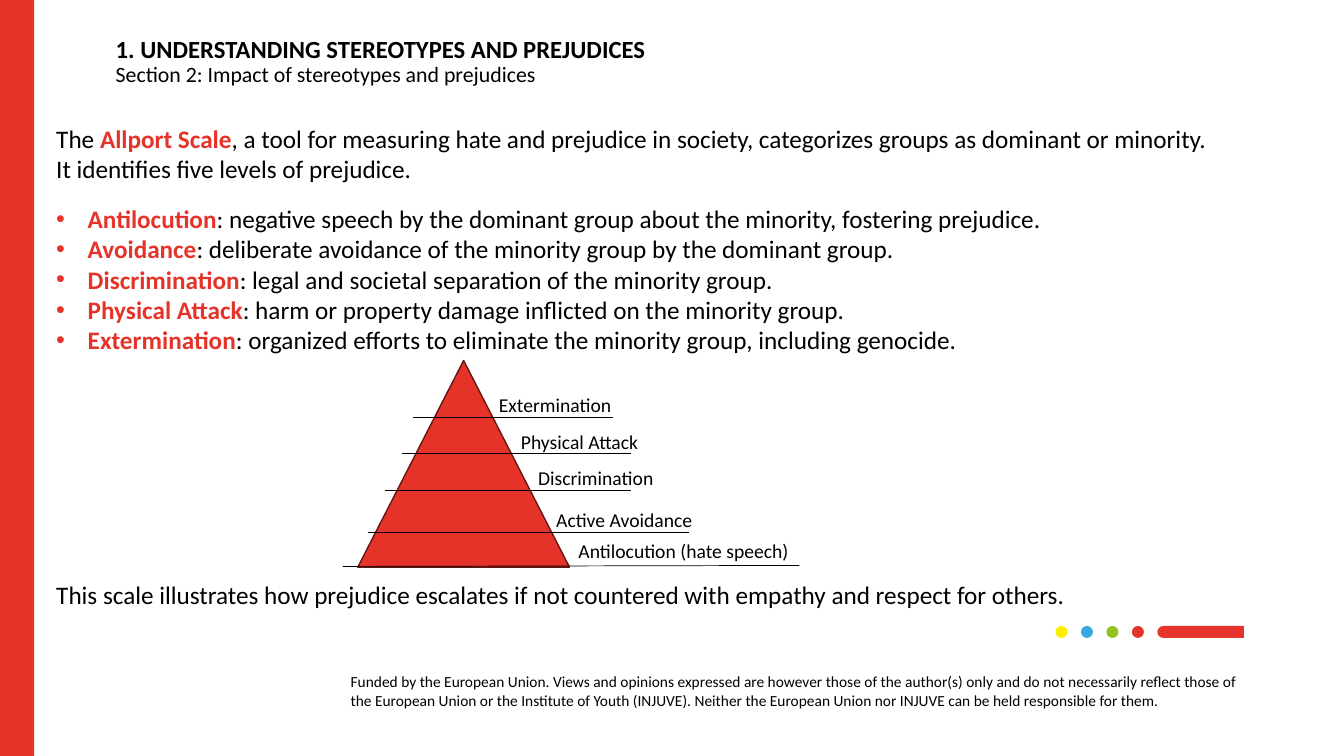
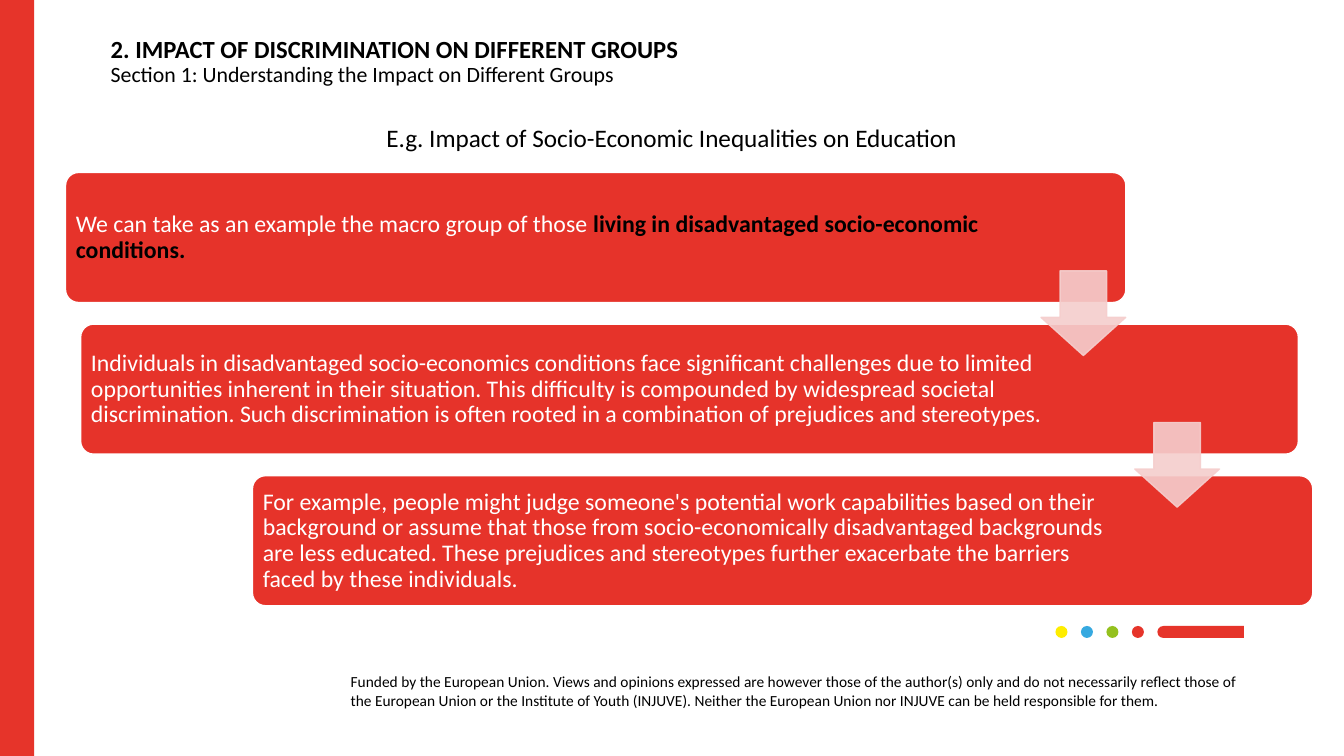
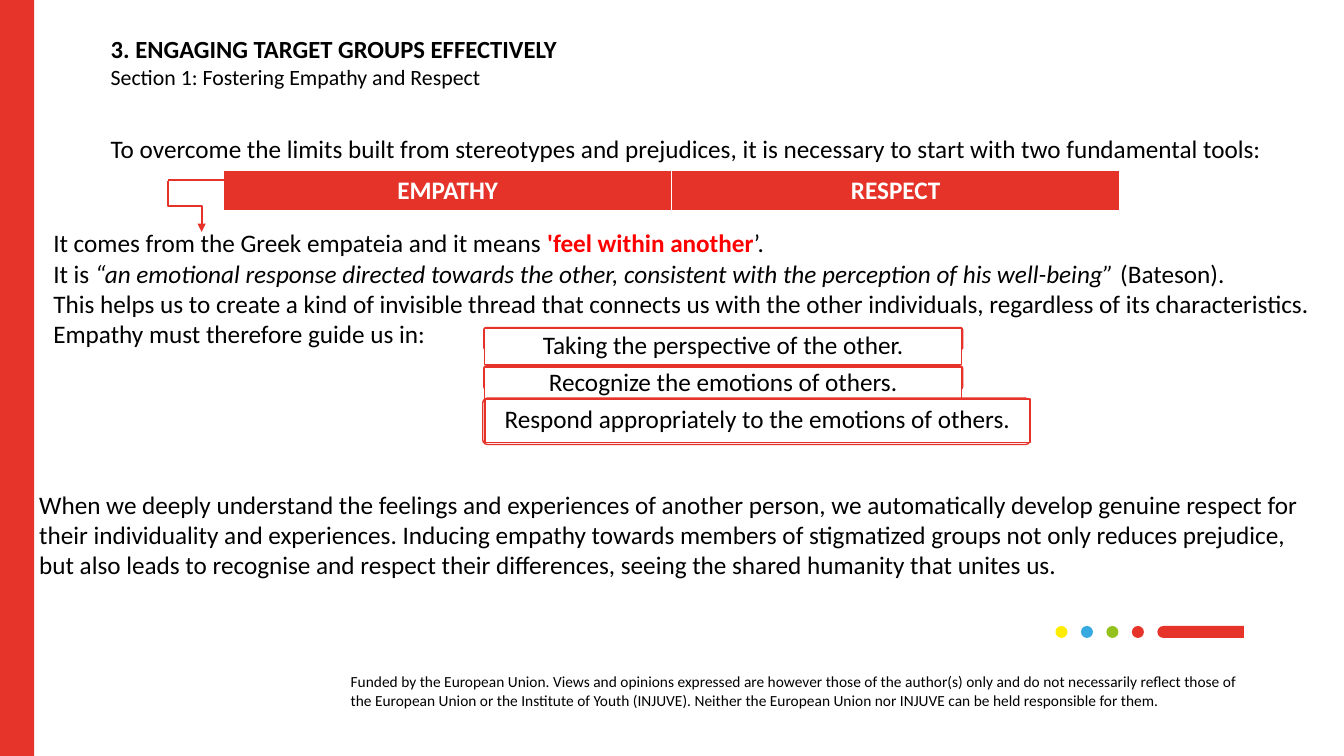
from dataclasses import dataclass
from typing import NamedTuple, Optional

from lxml import etree
from pptx import Presentation
from pptx.dml.color import RGBColor
from pptx.enum import shapes, text
from pptx.oxml import ns
from pptx.util import Pt

FONT = "Calibri"
COLORS = {
    "band": "E6342A", "red": "E6332A", "edge": "651612", "pure": "FF0000",
    "green": "94C11E", "blue": "36A9E0", "yellow": "FEED00",
    "pink": "F5CECD", "black": "000000", "white": "FFFFFF",
}
KIND = shapes.MSO_SHAPE
LEFT, MID, JUST = text.PP_ALIGN.LEFT, text.PP_ALIGN.CENTER, text.PP_ALIGN.JUSTIFY
FUNDING = (
    "Funded by the European Union. Views and opinions expressed are however those of the "
    "author(s) only and do not necessarily reflect those of the European Union or the "
    "Institute of Youth (INJUVE). Neither the European Union nor INJUVE can be held "
    "responsible for them."
)


class Area(NamedTuple):
    x: float
    y: float
    w: float
    h: float


@dataclass
class Run:
    text: str
    color: str = "black"
    bold: bool = False
    italic: bool = False
    size: float = 18


@dataclass
class Para:
    runs: list[Run]
    align: text.PP_ALIGN = LEFT
    lines: float = 1.0
    bullet: bool = False


class Level(NamedTuple):
    """One step of the pyramid: its label corner and its rule."""
    name: str
    x: float
    y: float
    start: float
    end: float
    rule: float
    rise: float = 0


class Step(NamedTuple):
    """One panel of the cascade and the width of its text."""
    x: float
    w: float
    wrap: float
    runs: list[Run]


class Skill(NamedTuple):
    name: str
    back: Area
    front: Area


def tint(name: str) -> RGBColor:
    return RGBColor.from_string(COLORS[name])


def sub(parent, tag: str, **attrs):
    return etree.SubElement(parent, ns.qn(tag), attrs)


def write(frame, paras: list[Para], inset=(7.2, 3.6), anchor=text.MSO_ANCHOR.TOP) -> None:
    frame.word_wrap = True
    frame.vertical_anchor = anchor
    frame.margin_left = frame.margin_right = Pt(inset[0])
    frame.margin_top = frame.margin_bottom = Pt(inset[1])
    for i, para in enumerate(paras):
        line = frame.add_paragraph() if i else frame.paragraphs[0]
        if para.bullet:
            props = line._p.get_or_add_pPr()
            props.set("marL", str(Pt(22.5)))
            props.set("indent", str(-Pt(22.5)))
            sub(props, "a:buFont", typeface="Arial")
            sub(props, "a:buChar", char="•")
        line.alignment = para.align
        line.line_spacing = para.lines
        for item in para.runs:
            run = line.add_run()
            run.text = item.text
            font = run.font
            font.name, font.size = FONT, Pt(item.size)
            font.bold, font.italic = item.bold, item.italic
            font.color.rgb = tint(item.color)


def label(slide, area: Area, *paras: Para, **style) -> None:
    box = slide.shapes.add_textbox(*map(Pt, area))
    write(box.text_frame, list(paras), **style)


def draw(slide, kind, area: Area, fill: str, line: Optional[str] = None, adjust=()):
    shape = slide.shapes.add_shape(kind, *map(Pt, area))
    shape.shadow.inherit = False
    shape.fill.solid()
    shape.fill.fore_color.rgb = tint(fill)
    if line:
        shape.line.color.rgb = tint(line)
        shape.line.width = Pt(1)
    else:
        shape.line.fill.background()
    for i, value in enumerate(adjust):
        shape.adjustments[i] = value
    return shape


def rule(slide, ends, color: str, width: float, kind=shapes.MSO_CONNECTOR.STRAIGHT):
    line = slide.shapes.add_connector(kind, *map(Pt, ends))
    line.line.color.rgb = tint(color)
    line.line.width = Pt(width)
    sub(line._element.spPr, "a:effectLst")
    return line


def start(deck, title: str, section: str, x: float = 72, lines: float = 0.9):
    """Add a slide with the band, dots, funding note and heading."""
    slide = deck.slides.add_slide(deck.slide_layouts[6])
    draw(slide, KIND.RECTANGLE, Area(0, 0, 24.5, 540), "band")
    draw(slide, KIND.RECTANGLE, Area(831.6, 447.1, 56.9, 8.6), "band")
    for i, color in enumerate(("yellow", "blue", "green", "band", "band")):
        draw(slide, KIND.OVAL, Area(753.9 + 18.2 * i, 447.1, 8.6, 8.6), color)
    label(slide, Area(243.4, 476.6, 650.2, 33.8), Para([Run(FUNDING, size=11)]))
    label(slide, Area(x, 23, 547.2, 49.7),
          Para([Run(title, bold=True, size=17.6)], lines=0.9),
          Para([Run(section, size=15.6)], lines=lines))
    return slide


def scale(deck) -> None:
    slide = start(deck, "1. UNDERSTANDING STEREOTYPES AND PREJUDICES",
                  "Section 2: Impact of stereotypes and prejudices", x=75.6)
    terms = {
        "Antilocution": "negative speech by the dominant group about the minority, fostering prejudice.",
        "Avoidance": "deliberate avoidance of the minority group by the dominant group.",
        "Discrimination": "legal and societal separation of the minority group.",
        "Physical Attack": "harm or property damage inflicted on the minority group.",
        "Extermination": "organized efforts to eliminate the minority group, including genocide.",
    }
    label(slide, Area(33.1, 141.8, 890.6, 116.6),
          *(Para([Run(term, "red", True), Run(": " + note)], bullet=True)
            for term, note in terms.items()))
    label(slide, Area(33.1, 410.4, 818.6, 28.8), Para([Run(
        "This scale illustrates how prejudice escalates if not countered with empathy "
        "and respect for others.")]))
    draw(slide, KIND.ISOSCELES_TRIANGLE, Area(255.6, 257.5, 151.2, 147.6), "red", "edge")
    levels = [
        Level("Extermination", 349.2, 277.2, 295.2, 437.8, 298.1),
        Level("Physical Attack", 365, 303.8, 287.3, 450.7, 324),
        Level("Discrimination", 377.3, 329, 275, 450.7, 350.6),
        Level("Active Avoidance", 390.2, 359.3, 262.8, 492.5, 380.2),
        Level("Antilocution (hate speech)", 406.1, 381.6, 244.8, 571, 404.6, 0.7),
    ]
    for row in levels:
        rule(slide, (row.start, row.rule, row.end, row.rule - row.rise), "black", 0.5)
        label(slide, Area(row.x, row.y, 222.5, 24.5), Para([Run(row.name, size=14)]))
    label(slide, Area(33.1, 84.2, 839.5, 51.1),
          Para([Run("The "), Run("Allport Scale", "red", True),
                Run(", a tool for measuring hate and prejudice in society, categorizes "
                    "groups as dominant or minority.")]),
          Para([Run("It identifies five levels of prejudice.")]))


def cascade(deck) -> None:
    slide = start(deck, "2. IMPACT OF DISCRIMINATION ON DIFFERENT GROUPS",
                  "Section 1: Understanding the Impact on Different Groups")
    steps = [
        Step(46.8, 757.4, 657.4, [
            Run("We can take as an example the macro group of those ", "white", size=17),
            Run("living in disadvantaged socio-economic conditions.", bold=True, size=17)]),
        Step(57.6, 869.8, 717.8, [Run(
            "Individuals in disadvantaged socio-economics conditions face significant "
            "challenges due to limited opportunities inherent in their situation. This "
            "difficulty is compounded by widespread societal discrimination. Such "
            "discrimination is often rooted in a combination of prejudices and stereotypes.",
            "white", size=17)]),
        Step(180.3, 757.4, 625, [Run(
            "For example, people might judge someone's potential work capabilities based on "
            "their background or assume that those from socio-economically disadvantaged "
            "backgrounds are less educated. These prejudices and stereotypes further "
            "exacerbate the barriers faced by these individuals.", "white", size=17)]),
    ]
    gap = 108.3
    for i, step in enumerate(steps):
        y = 123.2 + gap * i
        draw(slide, KIND.ROUNDED_RECTANGLE, Area(step.x, y, step.w, 92.9),
             "red", "white", (0.1,))
        label(slide, Area(step.x + 2.4, y + 2.7, step.wrap, 87.8),
              Para(step.runs, lines=0.9), inset=(5, 5), anchor=text.MSO_ANCHOR.MIDDLE)
    for i, x in enumerate((743.6, 810.6)):
        arrow = draw(slide, KIND.DOWN_ARROW, Area(x, 193.5 + gap * i, 60.5, 60.5),
                     "pink", "pink", (0.55, 0.45))
        for color in arrow._element.spPr.iter(ns.qn("a:srgbClr")):
            sub(color, "a:alpha", val="90000")
    label(slide, Area(239.8, 83.5, 480.2, 28.8), Para(
        [Run("E.g. Impact of Socio-Economic Inequalities on Education")], MID))


def tools(slide) -> None:
    """Add the two-cell table with white borders."""
    table = slide.shapes.add_table(1, 2, *map(Pt, (159.8, 121.7, 640, 29.5))).table
    table.first_row = table.horz_banding = False
    for cell, name in zip(table.iter_cells(), ("EMPATHY", "RESPECT")):
        write(cell.text_frame, [Para([Run(name, "white", True)], MID)])
        props = cell._tc.get_or_add_tcPr()
        for side, width in {"L": 1, "R": 1, "T": 1, "B": 3}.items():
            edge = sub(props, f"a:ln{side}", w=str(Pt(width)))
            sub(sub(edge, "a:solidFill"), "a:srgbClr", val=COLORS["white"])
        cell.fill.solid()
        cell.fill.fore_color.rgb = tint("red")


def empathy(deck) -> None:
    slide = start(deck, "3. ENGAGING TARGET GROUPS EFFECTIVELY",
                  "Section 1: Fostering Empathy and Respect", lines=1.0)
    label(slide, Area(20.9, 345.6, 918, 72.7), Para([Run(
        "When we deeply understand the feelings and experiences of another person, we "
        "automatically develop genuine respect for their individuality and experiences. "
        "Inducing empathy towards members of stigmatized groups not only reduces prejudice, "
        "but also leads to recognise and respect their differences, seeing the shared "
        "humanity that unites us.")]))
    label(slide, Area(72, 91.4, 926.6, 28.8), Para([Run(
        "To overcome the limits built from stereotypes and prejudices, it is necessary to "
        "start with two fundamental tools:")], JUST))
    tools(slide)
    label(slide, Area(31, 159.1, 919.4, 94.3),
          Para([Run("It comes from the Greek empateia and it means "),
                Run("'feel within another", "pure", True), Run("’.")], JUST),
          Para([Run("It is "),
                Run("“an emotional response directed towards the other, consistent with the "
                    "perception of his well-being”", italic=True),
                Run(" (Bateson).")], JUST),
          Para([Run("This helps us to create a kind of invisible thread that connects us with "
                    "the other individuals, regardless of its characteristics.")], JUST),
          Para([Run("Empathy must therefore guide us in:")], JUST))
    skills = [
        Skill("Taking the perspective of the other.",
              Area(345.6, 234, 342, 15.8), Area(346.3, 234.7, 340.6, 25.9)),
        Skill("Recognize the emotions of others.",
              Area(345.6, 261.4, 342, 16.6), Area(346.3, 262.1, 340.6, 23)),
        Skill("Respond appropriately to the emotions of others.",
              Area(344.9, 284.4, 391, 33.1), Area(346.3, 285.1, 389.5, 31)),
    ]
    for skill in skills:
        draw(slide, KIND.ROUNDED_RECTANGLE, skill.back, "white", "red", (0.1,))
        front = draw(slide, KIND.RECTANGLE, skill.front, "white", "red")
        write(front.text_frame, [Para([Run(skill.name)], MID, 0.9)],
              inset=(2.9, 2.2), anchor=text.MSO_ANCHOR.MIDDLE)
    bend = rule(slide, (150.5, 135.4, 113.8, 159.2), "red", 1.5, shapes.MSO_CONNECTOR.ELBOW)
    bend._element.spPr.find(ns.qn("a:xfrm")).set("rot", str(270 * 60000))
    sub(bend.line._get_or_add_ln(), "a:tailEnd", type="triangle")
    rule(slide, (120.2, 128.9, 159.8, 128.9), "red", 1.5)


def main() -> None:
    deck = Presentation()
    deck.slide_width, deck.slide_height = Pt(960), Pt(540)
    for build in (scale, cascade, empathy):
        build(deck)
    deck.save("out.pptx")


if __name__ == "__main__":
    main()
